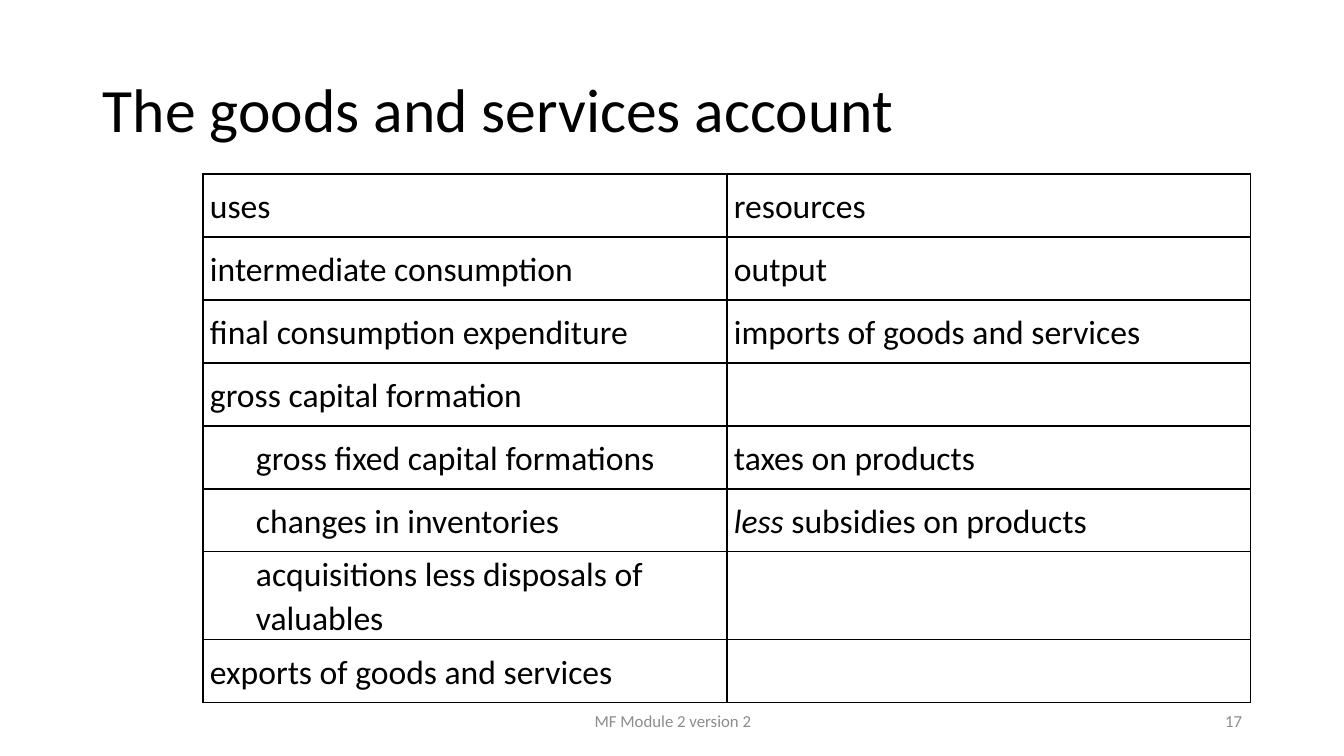
"""Build the slide showing the goods and services account as a two-column table."""
from lxml.etree import SubElement
from pptx import Presentation
from pptx.dml.color import RGBColor
from pptx.enum.text import MSO_ANCHOR as Anchor, PP_ALIGN as Align
from pptx.oxml.ns import qn
from pptx.util import Emu, Pt

FONT = "Calibri"
BLACK, GREY = "000000", "8C8C8C"
TEXTS = [
    ("The goods and services account", (93, 40, 1159, 146), 44, BLACK, Align.LEFT, 0.9),
    ("MF Module 2 version 2", (446, 701, 454, 40), 12, GREY, Align.CENTER, 1.0),
    ("17", (950, 701, 302, 40), 12, GREY, Align.RIGHT, 1.0),
]
ACCOUNT = [
    ("uses", "resources"),
    ("intermediate consumption", "output"),
    ("final consumption expenditure", "imports of goods and services"),
    ("gross capital formation", ""),
    ("gross fixed capital formations", "taxes on products"),
    ("changes in inventories", "less subsidies on products"),
    ("acquisitions less disposals of valuables", ""),
    ("exports of goods and services", ""),
]
CAPITAL_PARTS = range(4, 7)
TABLE_LEFT, TABLE_TOP, COLUMN_WIDTH = 203, 174, 524
ROW_HEIGHT, TALL_ROW_HEIGHT, TALL_ROW = 63, 88, 6
CELL_MARGIN, INDENT = 7, 46
ITALIC_WORD = "less"


def px(length):
    return Emu(round(length * 914400 / 100.8))


def color(value):
    return RGBColor.from_string(value)


def style(paragraph, size, text_color, spacing):
    paragraph.line_spacing = spacing
    paragraph.font.name = FONT
    paragraph.font.size = Pt(size)
    paragraph.font.color.rgb = color(text_color)


def add_text(slide, text, box, size, text_color, align, spacing):
    frame = slide.shapes.add_textbox(*map(px, box)).text_frame
    frame.word_wrap = True
    frame.vertical_anchor = Anchor.MIDDLE
    paragraph = frame.paragraphs[0]
    paragraph.text = text
    paragraph.alignment = align
    style(paragraph, size, text_color, spacing)


def set_borders(cell, top, bottom):
    properties = cell._tc.get_or_add_tcPr()
    for position, (side, width) in enumerate(zip("LRTB", (1, 1, top, bottom))):
        line = SubElement(properties, qn(f"a:ln{side}"), w=str(Pt(width)))
        fill = SubElement(line, qn("a:solidFill"))
        SubElement(fill, qn("a:srgbClr"), val=BLACK)
        properties.remove(line)
        properties.insert(position, line)


def fill_cell(cell, text, row, column):
    indented = column == 0 and row in CAPITAL_PARTS
    cell.margin_left = px(CELL_MARGIN + INDENT * indented)
    cell.margin_right = px(CELL_MARGIN)
    cell.margin_top = cell.margin_bottom = 0
    cell.vertical_anchor = Anchor.MIDDLE
    cell.fill.background()
    set_borders(cell, 1.5 if row == 1 else 1, 1.5 if row == 0 else 1)
    paragraph = cell.text_frame.paragraphs[0]
    style(paragraph, 24, BLACK, 1.07)
    if text.startswith(ITALIC_WORD):
        run = paragraph.add_run()
        run.text = ITALIC_WORD
        run.font.italic = True
        text = text.removeprefix(ITALIC_WORD)
    if text:
        paragraph.add_run().text = text


def add_account(slide):
    heights = [TALL_ROW_HEIGHT if row == TALL_ROW else ROW_HEIGHT for row in range(len(ACCOUNT))]
    box = (TABLE_LEFT, TABLE_TOP, 2 * COLUMN_WIDTH, sum(heights))
    table = slide.shapes.add_table(len(ACCOUNT), 2, *map(px, box)).table
    table.first_row = table.horz_banding = False
    for column in table.columns:
        column.width = px(COLUMN_WIDTH)
    for row, (height, texts) in enumerate(zip(heights, ACCOUNT)):
        table.rows[row].height = px(height)
        for column, text in enumerate(texts):
            fill_cell(table.cell(row, column), text, row, column)


def main():
    presentation = Presentation()
    presentation.slide_width, presentation.slide_height = px(1344), px(756)
    slide = presentation.slides.add_slide(presentation.slide_layouts[6])
    for text in TEXTS:
        add_text(slide, *text)
    add_account(slide)
    presentation.save("out.pptx")


if __name__ == "__main__":
    main()
